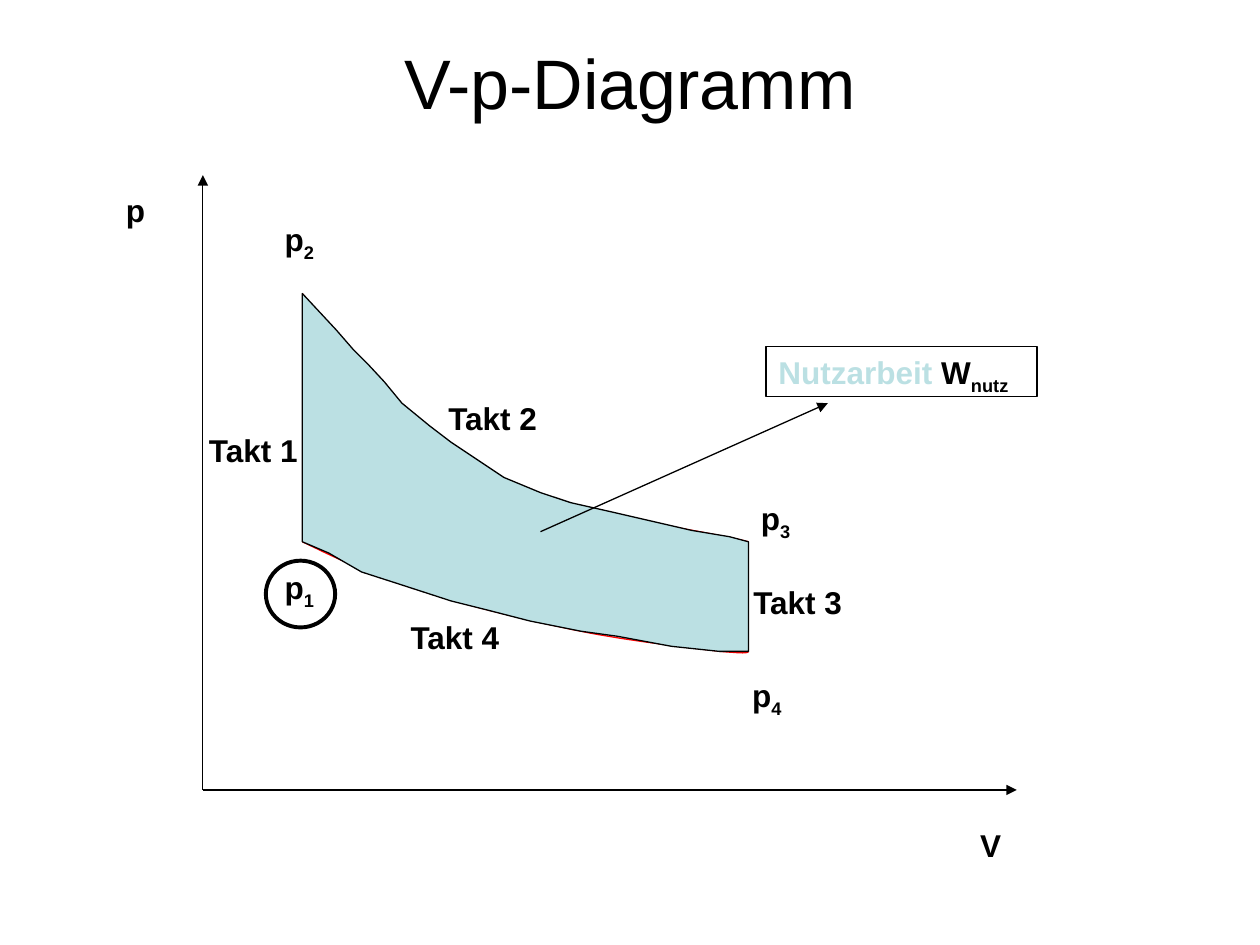
from lxml.etree import SubElement
from pptx import Presentation
from pptx.dml.color import RGBColor
from pptx.enum.shapes import MSO_CONNECTOR, MSO_SHAPE
from pptx.enum.text import MSO_ANCHOR, MSO_AUTO_SIZE, PP_ALIGN
from pptx.oxml import parse_xml
from pptx.oxml.ns import nsdecls, qn
from pptx.util import Inches, Pt

BLACK = RGBColor(0x00, 0x00, 0x00)
RED = RGBColor(0xFF, 0x00, 0x00)
TEAL = RGBColor(0xBB, 0xE0, 0xE3)

LEFT, RIGHT = 2.4, 5.94
P1, P2, P3, P4 = (LEFT, 4.3), (LEFT, 2.33), (RIGHT, 4.3), (RIGHT, 5.17)
ORIGIN = (1.61, 6.27)

UPPER = [P2, (2.67, 2.62), (2.8, 2.77), (2.92, 2.89), (3.05, 3.03),
         (3.19, 3.2), (3.41, 3.38), (3.58, 3.51), (3.82, 3.67), (4, 3.79),
         (4.29, 3.91), (4.53, 3.99), (4.84, 4.06), (5.49, 4.21),
         (5.79, 4.26), P3]
LOWER = [P4, (5.71, 5.17), (5.33, 5.13), (4.9, 5.05), (4.61, 5.01),
         (4.21, 4.93), (3.9, 4.85), (3.58, 4.77), (3.18, 4.64),
         (2.87, 4.54), (2.61, 4.39), P1]

EXPAND = [P2, (2.85, 2.88), (3.31, 3.42), (3.9, 3.75),
          (4.49, 4.08), (5.6, 4.21), P3]
COMPRESS = [P1, (2.69, 4.44), (2.98, 4.58), (3.35, 4.69),
            (3.71, 4.81), (4.21, 4.93), (4.61, 5.01),
            (5, 5.09), (5.49, 5.14), (5.71, 5.17),
            (5.93, 5.19), (5.94, 5.18), P4]


def add_run(para, text, size=18, color=BLACK, bold=True, sub=False):
    run = para.add_run()
    run.text = text
    font = run.font
    font.name, font.size, font.bold = "Arial", Pt(size), bold
    font.color.rgb = color
    if sub:
        run._r.get_or_add_rPr().set("baseline", "-25000")
    return run


def add_label(slide, x, y, width, text, sub="", wrap=True):
    box = slide.shapes.add_textbox(
        Inches(x), Inches(y), Inches(width), Inches(0.4))
    frame = box.text_frame
    frame.word_wrap = wrap
    frame.auto_size = MSO_AUTO_SIZE.SHAPE_TO_FIT_TEXT
    para = frame.paragraphs[0]
    add_run(para, text)
    if sub:
        add_run(para, sub, sub=True)


def add_title(slide, text):
    box = slide.shapes.add_textbox(
        Inches(0.5), Inches(0.3), Inches(9), Inches(0.69))
    frame = box.text_frame
    frame.word_wrap = True
    frame.vertical_anchor = MSO_ANCHOR.MIDDLE
    para = frame.paragraphs[0]
    para.alignment = PP_ALIGN.CENTER
    add_run(para, text, 40, bold=False)


def add_line(slide, start, end, color=BLACK, arrow=False):
    line = slide.shapes.add_connector(
        MSO_CONNECTOR.STRAIGHT, *map(Inches, start + end))
    line.line.color.rgb = color
    line.line.width = Pt(0.75)
    if arrow:
        SubElement(line.line._get_or_add_ln(), qn("a:tailEnd"), type="triangle")
    SubElement(line._element.spPr, qn("a:effectLst"))


def set_style(shape, color, width=0.75, fill=None):
    shape.shadow.inherit = False
    if fill is None:
        shape.fill.background()
    else:
        shape.fill.solid()
        shape.fill.fore_color.rgb = fill
    shape.line.color.rgb = color
    shape.line.width = Pt(width)


def add_path(slide, points, color, fill=None):
    units = [(round(x * 1000), round(y * 1000)) for x, y in points]
    form = slide.shapes.build_freeform(*units[0], scale=Inches(1) / 1000)
    form.add_line_segments(units[1:], close=fill is not None)
    set_style(form.convert_to_shape(), color, fill=fill)


def trace(nodes, steps=16):
    points = [nodes[0]]
    for i in range(0, len(nodes) - 1, 3):
        for k in range(1, steps + 1):
            t = k / steps
            u = 1 - t
            parts = (u ** 3, 3 * u * u * t, 3 * u * t * t, t ** 3)
            points.append(tuple(
                sum(w * node[axis] for w, node in zip(parts, nodes[i:i + 4]))
                for axis in (0, 1)))
    return points


def add_shape(slide, kind, x, y, width, height, weight):
    shape = slide.shapes.add_shape(
        kind, Inches(x), Inches(y), Inches(width), Inches(height))
    set_style(shape, BLACK, weight)
    return shape


def add_work(slide):
    box = add_shape(slide, MSO_SHAPE.RECTANGLE, 6.08, 2.75, 2.15, 0.4, 0.75)
    frame = box.text_frame
    frame.word_wrap = True
    frame.auto_size = MSO_AUTO_SIZE.SHAPE_TO_FIT_TEXT
    frame.vertical_anchor = MSO_ANCHOR.TOP
    para = frame.paragraphs[0]
    para.alignment = PP_ALIGN.LEFT
    run = add_run(para, "Nutzarbeit ", color=TEAL)
    edge = parse_xml(
        f'<a:ln {nsdecls("a")} w="9525"><a:solidFill>'
        f'<a:srgbClr val="{BLACK}"/></a:solidFill></a:ln>')
    run._r.get_or_add_rPr().insert(0, edge)
    add_run(para, "W")
    add_run(para, "nutz", sub=True)


def main():
    deck = Presentation()
    deck.slide_width, deck.slide_height = Inches(10), Inches(7.5)
    slide = deck.slides.add_slide(deck.slide_layouts[6])

    add_title(slide, "V-p-Diagramm")
    for tip in ((1.61, 1.39), (8.07, 6.27)):
        add_line(slide, ORIGIN, tip, arrow=True)
    for start, end in ((P1, P2), (P4, P3)):
        add_line(slide, start, end, RED)
    for nodes in (EXPAND, COMPRESS):
        add_path(slide, trace(nodes), RED)
    add_label(slide, 0.9, 1.47, 0.47, "p")
    add_label(slide, 7.68, 6.51, 0.47, "V")

    add_path(slide, UPPER + LOWER, BLACK, TEAL)
    add_line(slide, (4.29, 4.22), (6.57, 3.2), arrow=True)
    add_work(slide)

    for sub, x, y in (("1", 2.16, 4.46), ("4", 5.87, 5.32),
                      ("3", 5.94, 3.91), ("2", 2.16, 1.7)):
        add_label(slide, x, y, 0.55, "p", sub)
    for text, x, y, width in (("Takt 1", 1.56, 3.37, 0.91),
                              ("Takt 2", 3.46, 3.12, 0.91),
                              ("Takt 3", 5.88, 4.58, 0.98),
                              ("Takt 4", 3.16, 4.86, 0.91)):
        add_label(slide, x, y, width, text, wrap=False)
    add_shape(slide, MSO_SHAPE.OVAL, 2.11, 4.45, 0.55, 0.53, 2.25)

    deck.save("out.pptx")


if __name__ == "__main__":
    main()
